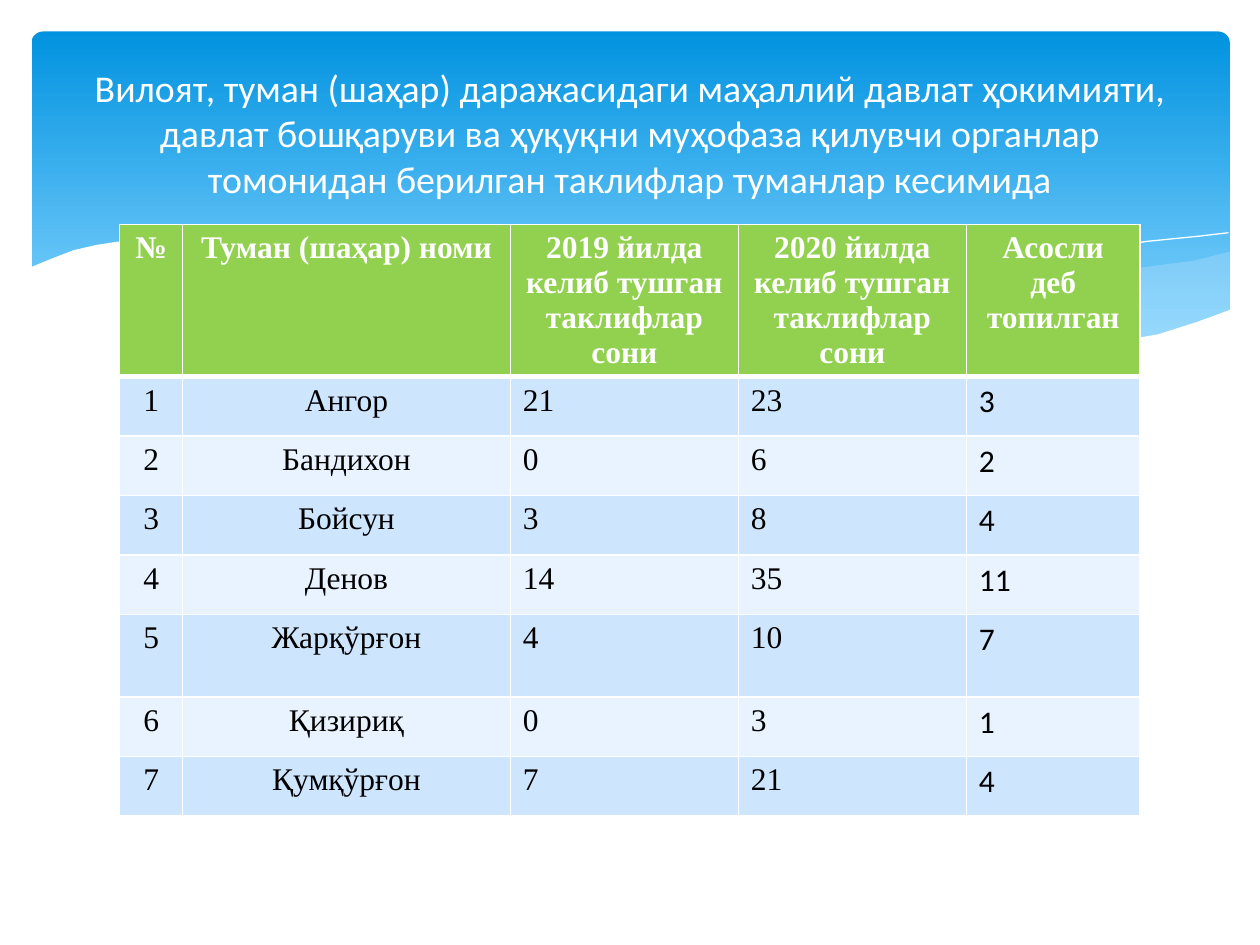
import dataclasses

import lxml.etree
import pptx
import pptx.dml.color
import pptx.enum.shapes
import pptx.enum.text
import pptx.oxml.ns
import pptx.util

Pt = pptx.util.Pt
qn = pptx.oxml.ns.qn
CENTER = pptx.enum.text.PP_ALIGN.CENTER
LEFT = pptx.enum.text.PP_ALIGN.LEFT


@dataclasses.dataclass(frozen=True)
class Theme:
    white: str = "FFFFFF"
    black: str = "000000"
    sky_dark: str = "0293E0"
    sky_light: str = "83D3FE"
    wave: str = "C6E7FC"
    header: str = "92D050"
    bands: tuple = ("CEE5FE", "E8F3FF")
    title_size: float = 21.6
    table_size: float = 18
    sans: str = "Calibri"
    serif: str = "Times New Roman"


THEME = Theme()

RIGHT_WAVE = [
    (702, 144), (682, 149), (652, 153), (620, 161), (580, 171), (542, 179),
    (508, 185), (476, 191), (508, 195), (536, 198), (562, 199.5), (586, 200),
    (608, 199), (628, 197), (646, 194), (662, 191), (678, 187), (693, 181),
    (703, 178), (703, 144)]
MIDDLE_WAVE = [
    (643, 197), (602, 191), (558, 183), (508, 173), (453, 160), (420, 152),
    (390, 146), (361, 141), (335, 138), (302, 134), (274, 133), (248, 134),
    (225, 135), (206, 138), (246, 143), (291, 152), (323, 160), (382, 173),
    (433, 184), (468, 190), (500, 194), (530, 198), (557, 199.5),
    (581, 200), (603, 200), (624, 199)]
LONG_CREST = [
    (222, 140), (236, 138), (254, 136), (279, 134.5), (312, 135),
    (338, 136), (367, 138), (400, 142), (438, 147), (479, 154), (523, 163),
    (572, 174), (626, 188), (653, 196)]
RIGHT_CREST = [
    (441, 185), (470, 177), (500, 169), (539, 161), (580, 151), (624, 143),
    (655, 138), (685, 135), (702, 133)]
PAPER_EDGE = [
    (703, 177), (684, 184), (662, 191), (639, 195), (612, 198), (582, 199),
    (548, 198), (510, 194), (467, 189), (417, 180), (362, 168), (322, 158),
    (282, 149), (245, 142), (210, 137), (180, 134), (152, 132.5),
    (127, 132.5), (105, 133), (86, 135), (68, 137.5), (55, 140), (42, 143),
    (29, 148), (17, 153), (17, 237), (703, 237)]

TITLE = ("Вилоят, туман (шаҳар) даражасидаги маҳаллий давлат ҳокимияти, "
         "давлат бошқаруви ва ҳуқуқни муҳофаза қилувчи органлар "
         "томонидан берилган таклифлар туманлар кесимида")
RECEIVED = "келиб тушган таклифлар сони"
HEADINGS = [["№"], ["Туман (шаҳар) номи"], ["2019 йилда", RECEIVED],
            ["2020 йилда", RECEIVED], ["Асосли деб топилган"]]
DISTRICTS = [("Ангор", 21, 23, 3), ("Бандихон", 0, 6, 2),
             ("Бойсун", 3, 8, 4), ("Денов", 14, 35, 11),
             ("Жарқўрғон", 4, 10, 7), ("Қизириқ", 0, 3, 1),
             ("Қумқўрғон", 7, 21, 4)]
COLUMN_WIDTHS = [36, 187.2, 130.3, 130.3, 99.4]
ROW_HEIGHTS = [87, 34, 34, 34, 34, 47, 34, 34]


def rgb(color):
    return pptx.dml.color.RGBColor.from_string(color)


def add_sky(page):
    sky = page.shapes.add_shape(
        pptx.enum.shapes.MSO_SHAPE.ROUNDED_RECTANGLE,
        Pt(18), Pt(18), Pt(684.7), Pt(194.4))
    sky.adjustments[0] = 0.034
    sky.shadow.inherit = False
    sky.line.fill.background()
    sky.fill.gradient()
    sky.fill.gradient_angle = 270
    stops = sky.fill.gradient_stops
    for stop, color, position in zip(
            stops, (THEME.sky_dark, THEME.sky_light), (0, 0.9)):
        stop.color.rgb = rgb(color)
        stop.position = position


def add_outline(page, points, close):
    builder = page.shapes.build_freeform(*points[0], scale=Pt(1))
    builder.add_line_segments(points[1:], close=close)
    outline = builder.convert_to_shape()
    outline.shadow.inherit = False
    return outline


def add_wave(page, points, color, opacity=100):
    wave = add_outline(page, points, True)
    wave.line.fill.background()
    wave.fill.solid()
    wave.fill.fore_color.rgb = rgb(color)
    if opacity < 100:
        tint = wave.fill._xPr.find(qn("a:solidFill"))[0]
        lxml.etree.SubElement(tint, qn("a:alpha"), val=str(opacity * 1000))


def add_crest(page, points):
    crest = add_outline(page, points, False)
    crest.fill.background()
    crest.line.color.rgb = rgb(THEME.white)
    crest.line.width = Pt(0)


def add_span(para, text, size, font, color, bold=False):
    span = para.add_run()
    span.text = text
    span.font.size = Pt(size)
    span.font.name = font
    span.font.bold = bold
    span.font.color.rgb = rgb(color)


def set_borders(cell, top, bottom):
    properties = cell._tc.get_or_add_tcPr()
    for side, width in (("L", 1), ("R", 1), ("T", top), ("B", bottom)):
        border = lxml.etree.SubElement(
            properties, qn(f"a:ln{side}"), w=str(Pt(width)))
        fill = lxml.etree.SubElement(border, qn("a:solidFill"))
        lxml.etree.SubElement(fill, qn("a:srgbClr"), val=THEME.white)


def fill_cell(cell, lines, align, font, color, background, bold, top, bottom):
    set_borders(cell, top, bottom)
    cell.fill.solid()
    cell.fill.fore_color.rgb = rgb(background)
    frame = cell.text_frame
    for index, line in enumerate(lines):
        para = frame.add_paragraph() if index else frame.paragraphs[0]
        para.alignment = align
        add_span(para, line, THEME.table_size, font, color, bold)


def add_district_table(page):
    table = page.shapes.add_table(
        len(ROW_HEIGHTS), len(COLUMN_WIDTHS), Pt(68.4), Pt(128.2),
        Pt(sum(COLUMN_WIDTHS)), Pt(sum(ROW_HEIGHTS))).table
    table.horz_banding = False
    for column, width in zip(table.columns, COLUMN_WIDTHS):
        column.width = Pt(width)
    for row, height in zip(table.rows, ROW_HEIGHTS):
        row.height = Pt(height)
    for column, lines in enumerate(HEADINGS):
        fill_cell(table.cell(0, column), lines, CENTER, THEME.serif,
                  THEME.white, THEME.header, True, 1, 3)
    for number, district in enumerate(DISTRICTS, 1):
        background = THEME.bands[(number - 1) % 2]
        for column, value in enumerate((number, *district)):
            fill_cell(table.cell(number, column), [str(value)],
                      CENTER if column < 2 else LEFT,
                      THEME.sans if column == 4 else THEME.serif,
                      THEME.black, background, False,
                      3 if number == 1 else 1, 1)


def set_title(page):
    title = page.shapes.title
    title.left, title.top = Pt(36), Pt(26.6)
    title.width, title.height = Pt(648), Pt(98.6)
    frame = title.text_frame
    frame.word_wrap = True
    frame.vertical_anchor = pptx.enum.text.MSO_ANCHOR.MIDDLE
    para = frame.paragraphs[0]
    para.alignment = CENTER
    add_span(para, TITLE, THEME.title_size, THEME.sans, THEME.white)
    page.shapes._spTree.append(title._element)


def main():
    deck = pptx.Presentation()
    deck.slide_width, deck.slide_height = Pt(720), Pt(540)
    page = deck.slides.add_slide(deck.slide_layouts[5])
    add_sky(page)
    add_wave(page, RIGHT_WAVE, THEME.wave, 29)
    add_wave(page, MIDDLE_WAVE, THEME.wave, 40)
    add_crest(page, LONG_CREST)
    add_crest(page, RIGHT_CREST)
    add_wave(page, PAPER_EDGE, THEME.white)
    add_district_table(page)
    set_title(page)
    deck.save("out.pptx")


if __name__ == "__main__":
    main()
